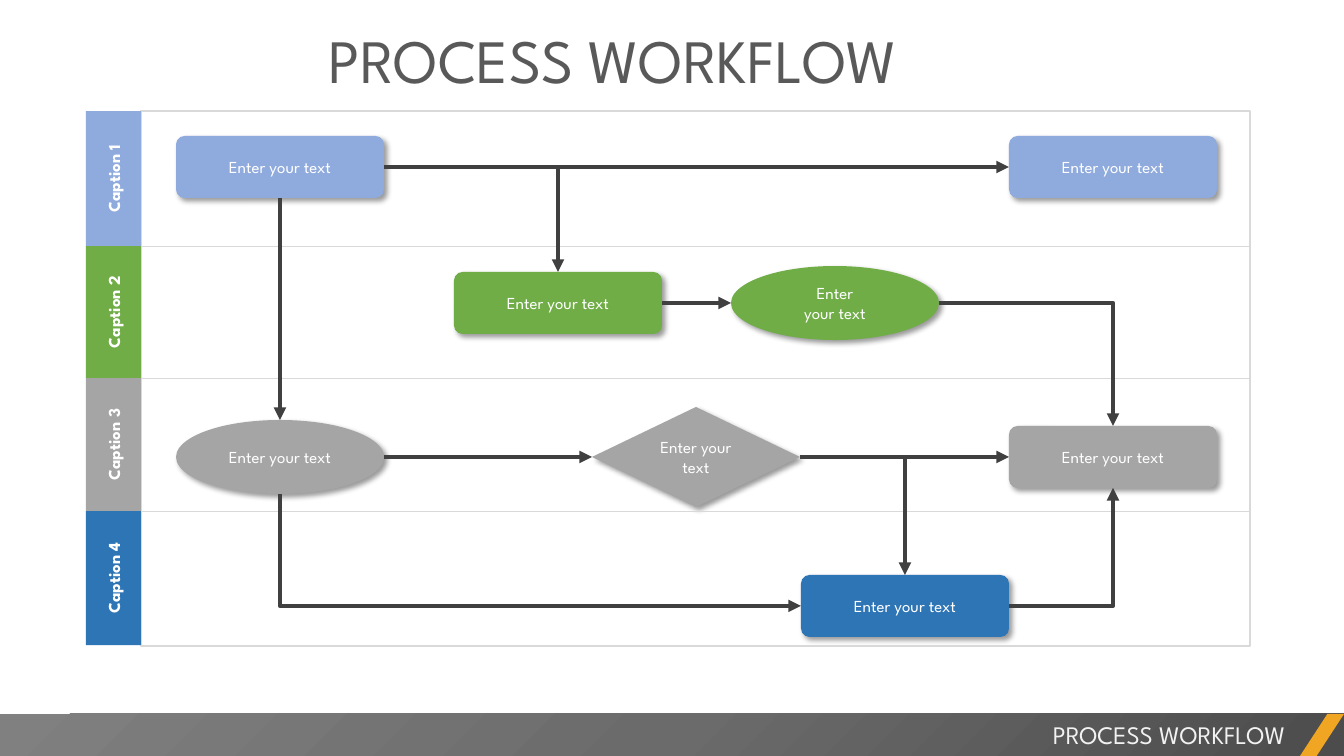
from lxml import etree
from pptx import Presentation
from pptx.dml.color import RGBColor
from pptx.enum.shapes import MSO_CONNECTOR, MSO_SHAPE
from pptx.enum.text import MSO_ANCHOR, PP_ALIGN
from pptx.oxml import parse_xml
from pptx.oxml.ns import qn
from pptx.util import Pt

ROUND, OVAL, DIAMOND = MSO_SHAPE.ROUNDED_RECTANGLE, MSO_SHAPE.OVAL, MSO_SHAPE.DIAMOND
RECT, SLANT = MSO_SHAPE.RECTANGLE, MSO_SHAPE.PARALLELOGRAM
STRAIGHT, ELBOW = MSO_CONNECTOR.STRAIGHT, MSO_CONNECTOR.ELBOW
LEFT, CENTER, RIGHT = PP_ALIGN.LEFT, PP_ALIGN.CENTER, PP_ALIGN.RIGHT
PX = 914400 / 100.8
DRAWING = 'xmlns:a="http://schemas.openxmlformats.org/drawingml/2006/main"'
SHADOW = (f'<a:effectLst {DRAWING}><a:outerShdw blurRad="50800" dist="38100" dir="2700000" '
          'algn="tl" rotWithShape="0"><a:srgbClr val="000000"><a:alpha val="40000"/></a:srgbClr>'
          '</a:outerShdw></a:effectLst>')
GRADIENT = (f'<a:gradFill {DRAWING}><a:gsLst><a:gs pos="0"><a:srgbClr val="4C4C4C"/></a:gs>'
            '<a:gs pos="50000"><a:srgbClr val="6B6B6B"/></a:gs>'
            '<a:gs pos="100000"><a:srgbClr val="808080"/></a:gs></a:gsLst>'
            '<a:path path="circle"><a:fillToRect l="100000" t="100000"/></a:path></a:gradFill>')
BLUE, GREEN, GRAY, NAVY = "8FAADC", "70AD47", "A5A5A5", "2E75B6"
DARK, PALE, WHITE = "404040", "D9D9D9", "FFFFFF"

deck = Presentation()
deck.slide_width, deck.slide_height = round(1344 * PX), round(756 * PX)
page = deck.slides.add_slide(deck.slide_layouts[6])


def color(value):
    return RGBColor.from_string(value)


def write(box, text, size=12, ink=WHITE, bold=False, align=CENTER, anchor=MSO_ANCHOR.MIDDLE):
    frame = box.text_frame
    frame.word_wrap = True
    frame.vertical_anchor = anchor
    para = frame.paragraphs[0]
    para.text = text
    para.alignment = align
    for span in para.runs:
        span.font.name = "League Spartan"
        span.font.size = Pt(size)
        span.font.bold = bold
        span.font.color.rgb = color(ink)


# Process steps on a regular column grid: name, column, row centre, shape, fill, text
heights = {ROUND: 62, OVAL: 74, DIAMOND: 100}
steps = [
    ("start", 0, 167, ROUND, BLUE, "Enter your text"),
    ("finish", 12, 167, ROUND, BLUE, "Enter your text"),
    ("task", 4, 303, ROUND, GREEN, "Enter your text"),
    ("review", 8, 303, OVAL, GREEN, "Enter\vyour text"),
    ("check", 0, 457, OVAL, GRAY, "Enter your text"),
    ("decision", 6, 457, DIAMOND, GRAY, "Enter your text"),
    ("result", 12, 457, ROUND, GRAY, "Enter your text"),
    ("followup", 9, 606, ROUND, NAVY, "Enter your text"),
]
boxes, sides = {}, {}
for name, column, y, kind, fill, text in steps:
    x, half = round(280 + 69.4 * column), heights[kind] // 2
    box = page.shapes.add_shape(kind, *(round(v * PX) for v in (x - 104, y - half, 208, 2 * half)))
    if kind == ROUND:
        box.adjustments[0] = 0.136
    box.fill.solid()
    box.fill.fore_color.rgb = color(fill)
    box.line.fill.background()
    box.element.spPr.append(parse_xml(SHADOW))
    write(box, text)
    boxes[name] = box
    sides[name] = [(x, y - half), (x - 104, y), (x, y + half), (x + 104, y)]

# Lines: kind, start, end, colour, width, arrow end, joined steps
# Elbows run horizontally first, so the one leaving "check" is drawn from its arrow end
lines = [(STRAIGHT, (141, y), (1250, y), PALE, 0.5, None, ()) for y in (246, 378, 511)]
flows = [
    (STRAIGHT, "start", 3, "finish", 1, "tailEnd"),
    (STRAIGHT, "start", 2, "check", 0, "tailEnd"),
    (STRAIGHT, "task", 3, "review", 1, "tailEnd"),
    (STRAIGHT, "check", 3, "decision", 1, "tailEnd"),
    (STRAIGHT, "decision", 3, "result", 1, "tailEnd"),
    (ELBOW, "start", 3, "task", 0, "tailEnd"),
    (ELBOW, "review", 3, "result", 0, "tailEnd"),
    (ELBOW, "decision", 3, "followup", 0, "tailEnd"),
    (ELBOW, "followup", 1, "check", 2, "headEnd"),
    (ELBOW, "followup", 3, "result", 2, "tailEnd"),
]
for kind, source, out, target, into, arrow in flows:
    lines.append((kind, sides[source][out], sides[target][into], DARK, 3, arrow,
                  (source, out, target, into)))
for kind, start, end, ink, width, arrow, joined in lines:
    link = page.shapes.add_connector(kind, *(round(v * PX) for v in start + end))
    link.line.color.rgb = color(ink)
    link.line.width = Pt(width)
    properties = link._element.spPr
    if arrow:
        etree.SubElement(link.line._get_or_add_ln(), qn(f"a:{arrow}"), type="triangle")
    etree.SubElement(properties, qn("a:effectLst"))
    if kind == ELBOW:
        properties.find(qn("a:prstGeom")).set("prst", "bentConnector2")
    elif joined:
        source, out, target, into = joined
        if boxes[source].auto_shape_type != OVAL:
            link.begin_connect(boxes[source], out)
        if boxes[target].auto_shape_type != OVAL:
            link.end_connect(boxes[target], into)

# Lane frame
frame = page.shapes.add_shape(RECT, *(round(v * PX) for v in (141, 111, 1109, 535)))
frame.shadow.inherit = False
frame.fill.background()
frame.line.color.rgb = color(PALE)
frame.line.width = Pt(1)

# Lane captions, turned to read upwards
edges = (111, 246, 378, 511, 645)
for number, fill in enumerate((BLUE, GREEN, GRAY, NAVY), start=1):
    top, bottom = edges[number - 1:number + 1]
    length, middle = bottom - top, (top + bottom) / 2
    caption = page.shapes.add_shape(
        RECT, *(round(v * PX) for v in (113.5 - length / 2, middle - 27.5, length, 55)))
    caption.rotation = 270
    caption.shadow.inherit = False
    caption.fill.solid()
    caption.fill.fore_color.rgb = color(fill)
    caption.line.fill.background()
    write(caption, f"Caption {number}", bold=True)

# Footer bar and accent
bar = page.shapes.add_shape(RECT, *(round(v * PX) for v in (0, 714, 1344, 42)))
bar.shadow.inherit = False
bar.line.fill.background()
bar.element.spPr.find(qn("a:prstGeom")).addnext(parse_xml(GRADIENT))
accent = page.shapes.add_shape(SLANT, *(round(v * PX) for v in (1300, 714, 44, 42)))
accent.adjustments[0] = 0.652
accent.shadow.inherit = False
accent.fill.solid()
accent.fill.fore_color.rgb = color("F0A622")
accent.line.fill.background()

# Title and footer text
title = page.shapes.add_textbox(*(round(v * PX) for v in (329, 22, 653, 75)))
title.text_frame.margin_left = title.text_frame.margin_right = 0
title.text_frame.margin_top = title.text_frame.margin_bottom = 0
write(title, "PROCESS WORKFLOW", size=44, ink="595959", align=LEFT, anchor=MSO_ANCHOR.TOP)
footer = page.shapes.add_textbox(*(round(v * PX) for v in (529, 714, 766, 40)))
write(footer, "PROCESS WORKFLOW", size=18, ink="F2F2F2", align=RIGHT, anchor=MSO_ANCHOR.TOP)

deck.save("out.pptx")
